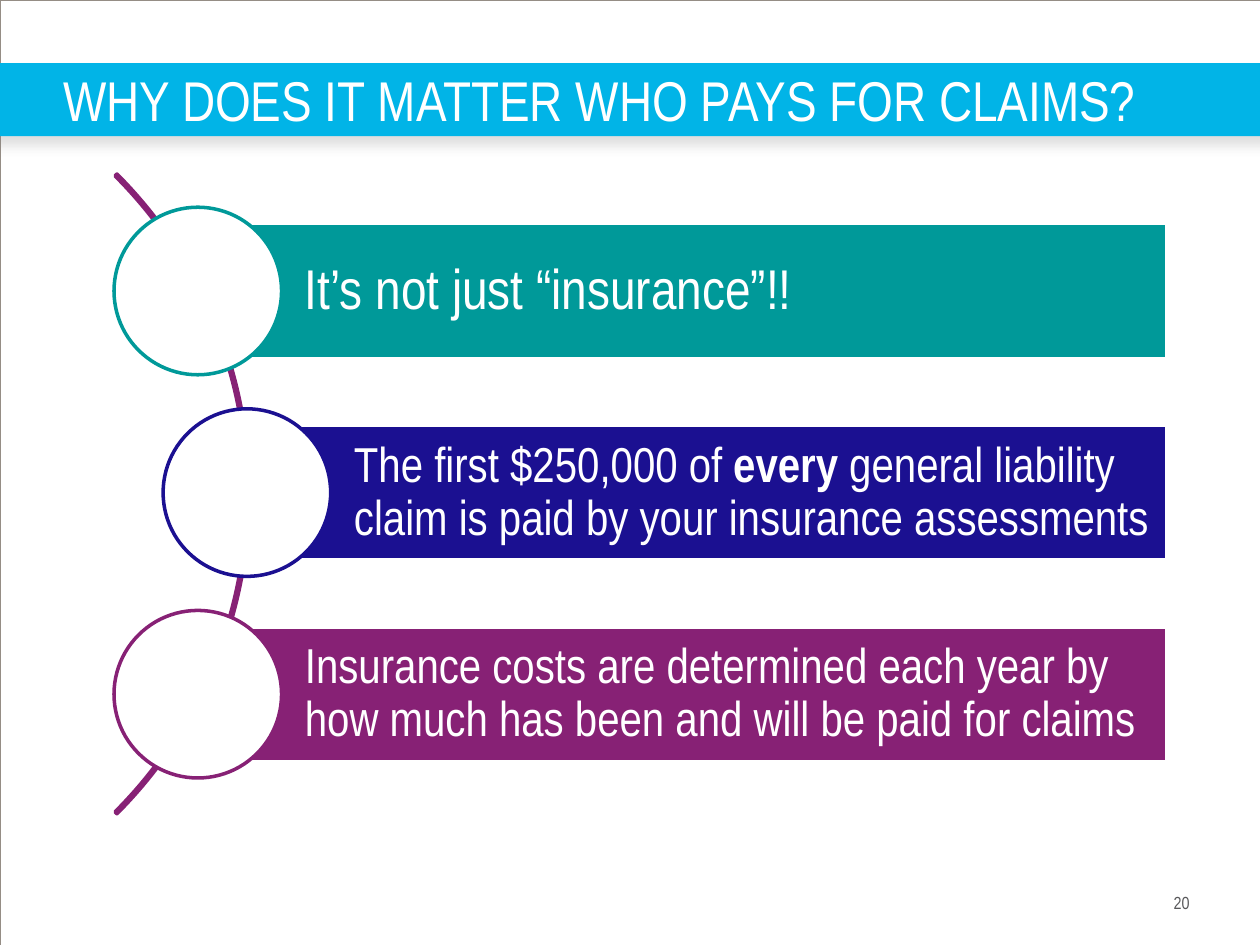
"""Build the slide on who pays for claims."""
from lxml import etree
from pptx import Presentation
from pptx.dml.color import RGBColor
from pptx.enum.shapes import MSO_SHAPE as Shape
from pptx.enum.text import MSO_ANCHOR as Anchor, MSO_AUTO_SIZE as AutoSize, PP_ALIGN as Align
from pptx.oxml import parse_xml
from pptx.oxml.ns import nsdecls, qn
from pptx.util import Inches, Pt

FONT = "Arial Narrow"
WHITE = RGBColor(0xFF, 0xFF, 0xFF)
SKY = RGBColor(0x01, 0xB4, 0xE7)
TEAL = RGBColor(0x00, 0x99, 0x99)
NAVY = RGBColor(0x1B, 0x10, 0x91)
PLUM = RGBColor(0x87, 0x21, 0x75)
FRAME = RGBColor(0x95, 0x8D, 0x85)
GRAY = RGBColor(0x58, 0x58, 0x5A)

CIRCLE = 1.33
BAR_HEIGHT = 1.07
BAR_RIGHT = 9.26
FIRST_CENTER = 2.31
ROW_PITCH = 1.6

ROWS = [
    (1.57, TEAL, 32, [("It’s not just “insurance”!!", False)]),
    (1.96, NAVY, 28, [
        ("The first $250,000 of ", False),
        ("every", True),
        (" general liability claim is paid by your insurance assessments", False),
    ]),
    (1.57, PLUM, 28, [
        ("Insurance costs are determined each year by how much has been and will be paid for claims", False),
    ]),
]


def add_figure(page, kind, place, fill=None, line=None, width=2):
    """Add a preset shape with the given fill and outline."""
    figure = page.shapes.add_shape(kind, *map(Inches, place))
    figure.shadow.inherit = False
    if fill is None:
        figure.fill.background()
    else:
        figure.fill.solid()
        figure.fill.fore_color.rgb = fill
    if line is None:
        figure.line.fill.background()
    else:
        figure.line.color.rgb = line
        figure.line.width = Pt(width)
    return figure


def write_text(box, spans, size, color, margins=(0, 0, 0, 0), anchor=Anchor.MIDDLE, align=Align.LEFT):
    """Fill the first paragraph of a box run by run and return it."""
    frame = box.text_frame
    frame.word_wrap = True
    frame.auto_size = AutoSize.NONE
    frame.vertical_anchor = anchor
    frame.margin_left, frame.margin_top, frame.margin_right, frame.margin_bottom = map(Inches, margins)
    para = frame.paragraphs[0]
    para.alignment = align
    for text, bold in spans:
        span = para.add_run()
        span.text = text
        span.font.name = FONT
        span.font.size = Pt(size)
        span.font.bold = bold
        span.font.color.rgb = color
    return para


def add_soft_shadow(figure):
    """Give a shape a soft gray shadow below it."""
    effects = figure._element.spPr.find(qn("a:effectLst"))
    effects.append(parse_xml(
        f'<a:outerShdw {nsdecls("a")} blurRad="{Pt(7)}" dist="{Pt(4.8)}" dir="5400000" rotWithShape="0">'
        '<a:srgbClr val="808080"><a:alpha val="25000"/></a:srgbClr></a:outerShdw>'
    ))


def add_title(page, text):
    """Add the title band and put the title placeholder over it."""
    band = add_figure(page, Shape.RECTANGLE, (-0.08, 0.5, 10.17, 0.58), SKY)
    add_soft_shadow(band)
    title = page.shapes.title
    title.left, title.top, title.width, title.height = map(Inches, (0.5, 0.5, 9.17, 0.58))
    write_text(title, [(text, False)], 32, WHITE)
    band._element.addnext(title._element)


def add_arc(page):
    """Add the thin arc that links the circles."""
    arc = add_figure(page, Shape.BLOCK_ARC, (-5.2, 0.33, 7.18, 7.18), line=PLUM)
    for index, value in enumerate((189, 27, 0.003)):
        arc.adjustments[index] = value


def add_row(page, center, left, color, size, spans):
    """Add a text bar with a circle centred on its left end."""
    place = (left, center - BAR_HEIGHT / 2, BAR_RIGHT - left, BAR_HEIGHT)
    bar = add_figure(page, Shape.RECTANGLE, place, color, WHITE)
    para = write_text(bar, spans, size, WHITE, (0.85, 0.08, 0.08, 0.08))
    para.line_spacing = 0.9
    place = (left - CIRCLE / 2, center - CIRCLE / 2, CIRCLE, CIRCLE)
    add_figure(page, Shape.OVAL, place, WHITE, color)


def add_page_number(page, number):
    """Add the page number at the lower right."""
    box = page.shapes.add_textbox(*map(Inches, (7.75, 7.08, 1.69, 0.17)))
    write_text(box, [(number, False)], 10, GRAY, anchor=Anchor.TOP, align=Align.RIGHT)


def main():
    """Build and save the deck."""
    deck = Presentation()
    deck.slide_width, deck.slide_height = Inches(10), Inches(7.5)
    page = deck.slides.add_slide(deck.slide_layouts[5])
    add_page_number(page, "20")
    add_figure(page, Shape.RECTANGLE, (0, 0, 10, 7.5), line=FRAME, width=0.13)
    add_title(page, "WHY DOES IT MATTER WHO PAYS FOR CLAIMS?")
    add_arc(page)
    for index, row in enumerate(ROWS):
        add_row(page, FIRST_CENTER + index * ROW_PITCH, *row)
    deck.save("out.pptx")


if __name__ == "__main__":
    main()
